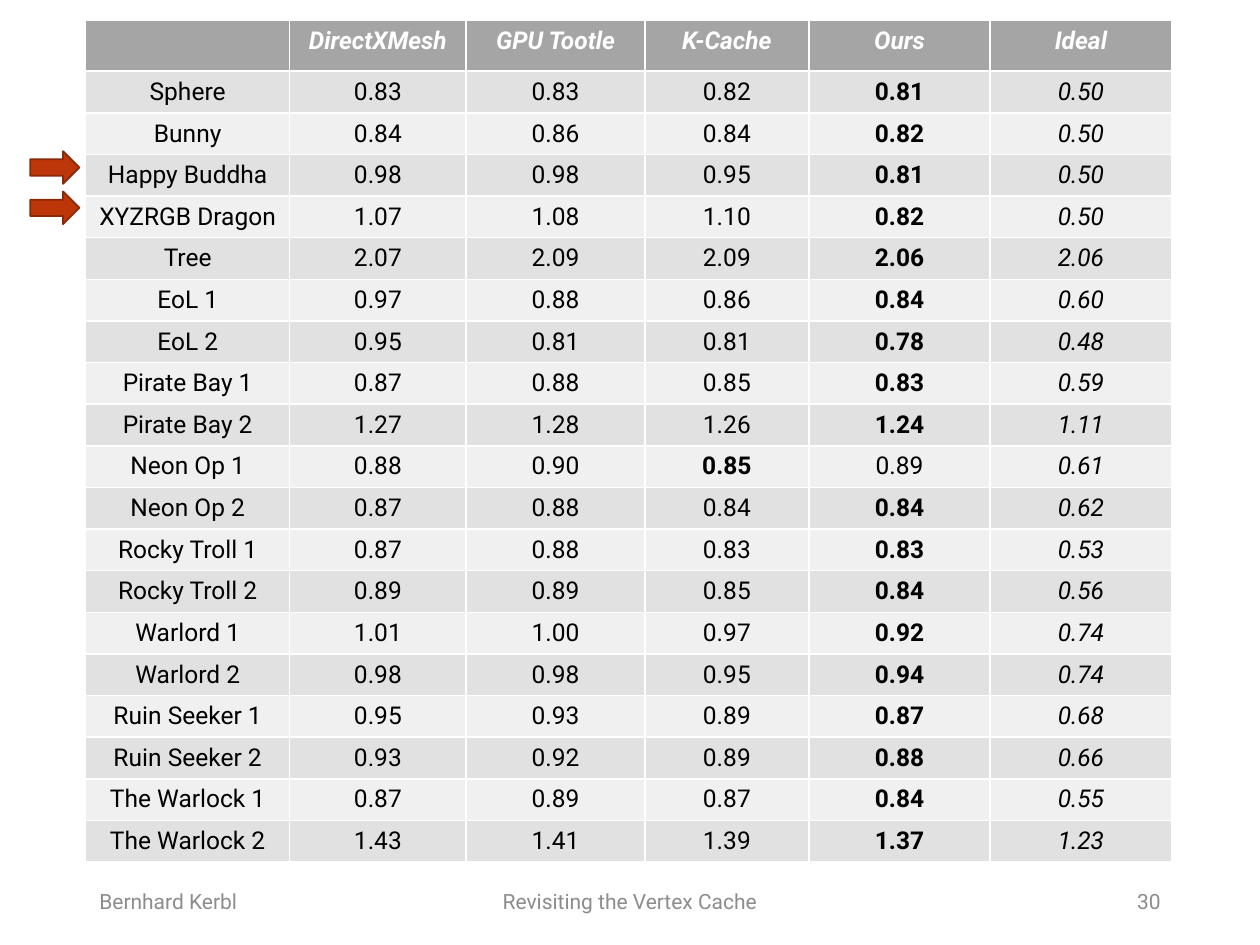
from pptx import Presentation
from pptx import util as u
from pptx.dml.color import RGBColor
from pptx.enum import shapes, text

FONT = "Roboto"


def rgb(value):
    return RGBColor.from_string(value)


def write(tf, content, size, color, align, bold=False, italic=False):
    p = tf.paragraphs[0]
    p.text = content
    p.alignment = align
    for r in p.runs:
        r.font.name, r.font.size = FONT, u.Pt(size)
        r.font.bold, r.font.italic = bold, italic
        r.font.color.rgb = rgb(color)


prs = Presentation()
prs.slide_width, prs.slide_height = u.Inches(10), u.Inches(7.5)
s = prs.slides.add_slide(prs.slide_layouts[6])

# Results per mesh; the last column is the ideal value
rows = [
    ("", "DirectXMesh", "GPU Tootle", "K-Cache", "Ours", "Ideal"),
    ("Sphere", "0.83", "0.83", "0.82", "0.81", "0.50"),
    ("Bunny", "0.84", "0.86", "0.84", "0.82", "0.50"),
    ("Happy Buddha", "0.98", "0.98", "0.95", "0.81", "0.50"),
    ("XYZRGB Dragon", "1.07", "1.08", "1.10", "0.82", "0.50"),
    ("Tree", "2.07", "2.09", "2.09", "2.06", "2.06"),
    ("EoL 1", "0.97", "0.88", "0.86", "0.84", "0.60"),
    ("EoL 2", "0.95", "0.81", "0.81", "0.78", "0.48"),
    ("Pirate Bay 1", "0.87", "0.88", "0.85", "0.83", "0.59"),
    ("Pirate Bay 2", "1.27", "1.28", "1.26", "1.24", "1.11"),
    ("Neon Op 1", "0.88", "0.90", "0.85", "0.89", "0.61"),
    ("Neon Op 2", "0.87", "0.88", "0.84", "0.84", "0.62"),
    ("Rocky Troll 1", "0.87", "0.88", "0.83", "0.83", "0.53"),
    ("Rocky Troll 2", "0.89", "0.89", "0.85", "0.84", "0.56"),
    ("Warlord 1", "1.01", "1.00", "0.97", "0.92", "0.74"),
    ("Warlord 2", "0.98", "0.98", "0.95", "0.94", "0.74"),
    ("Ruin Seeker 1", "0.95", "0.93", "0.89", "0.87", "0.68"),
    ("Ruin Seeker 2", "0.93", "0.92", "0.89", "0.88", "0.66"),
    ("The Warlock 1", "0.87", "0.89", "0.87", "0.84", "0.55"),
    ("The Warlock 2", "1.43", "1.41", "1.39", "1.37", "1.23"),
]
widths = [1.62, 1.4, 1.42, 1.3, 1.44, 1.44]
OURS, IDEAL = 4, 5
row_height = 0.33

# Table
table = s.shapes.add_table(len(rows), len(widths), u.Inches(0.68), u.Inches(0.16),
                           u.Inches(sum(widths)), u.Inches(row_height * len(rows))).table
for column, width in zip(table.columns, widths):
    column.width = u.Inches(width)

for i, row in enumerate(rows):
    table.rows[i].height = u.Inches(row_height)
    header = i == 0
    # The best method is bold, and a tie goes to ours
    best = OURS if header or row[OURS] <= min(row[1:OURS]) else row.index(min(row[1:OURS]))
    for j, value in enumerate(row):
        cell = table.cell(i, j)
        cell.fill.solid()
        cell.fill.fore_color.rgb = rgb("A5A5A5" if header else "E1E1E1" if i % 2 else "F0F0F0")
        write(cell.text_frame, value, 14, "FFFFFF" if header else "000000",
              text.PP_ALIGN.CENTER, header or j == best, header or j == IDEAL)

# Footer
footer = [
    (0.69, 2.25, "Bernhard Kerbl", text.PP_ALIGN.LEFT),
    (3.31, 3.38, "Revisiting the Vertex Cache", text.PP_ALIGN.CENTER),
    (7.06, 2.25, "30", text.PP_ALIGN.RIGHT),
]
for left, width, content, align in footer:
    tf = s.shapes.add_textbox(u.Inches(left), u.Inches(6.95),
                              u.Inches(width), u.Inches(0.4)).text_frame
    tf.word_wrap = True
    tf.vertical_anchor = text.MSO_ANCHOR.MIDDLE
    write(tf, content, 12, "8C8C8C", align)

# Arrows at the two highlighted meshes
for top in (1.2, 1.52):
    sp = s.shapes.add_shape(shapes.MSO_SHAPE.RIGHT_ARROW, u.Inches(0.24), u.Inches(top),
                            u.Inches(0.39), u.Inches(0.26))
    sp.shadow.inherit = False
    sp.fill.solid()
    sp.fill.fore_color.rgb = rgb("BC360A")
    sp.line.color.rgb = rgb("8B2807")
    sp.line.width = u.Pt(1)

prs.save("out.pptx")
